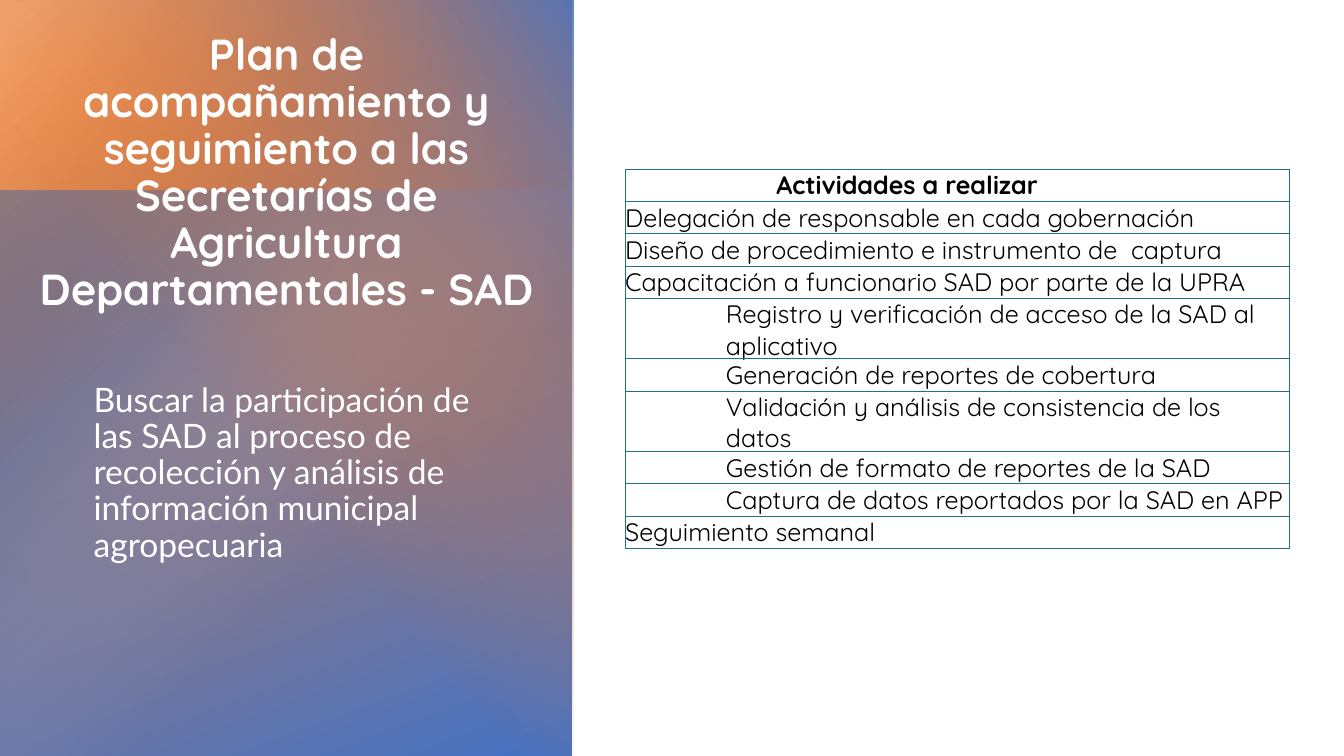
from dataclasses import dataclass

from lxml import etree
from pptx import Presentation
from pptx.dml.color import RGBColor
from pptx.enum import shapes, text
from pptx.oxml import ns
from pptx.util import Emu, Pt

PX = 9144  # one hundred px to the inch
INDENT = 50
WHITE, BLACK, BORDER = "FFFFFF", "000000", "236C95"


@dataclass
class Stop:
    position: int
    colour: str
    opacity: int = 100


@dataclass
class Wash:
    left: int
    top: int
    width: int
    height: int
    stops: list[Stop]
    angle: int | None = None  # None gives a radial wash
    rotation: int = 0


@dataclass
class Activity:
    label: str
    level: int = 0
    bold: bool = False


WASHES = [
    Wash(-2, 0, 569, 753, [Stop(7, "ED7D31"), Stop(100, "4472C4")], 70),
    Wash(-2, 189, 569, 563, [Stop(0, "2F5597"), Stop(60, "8FAADC", 0)], None, 180),
    Wash(-2, 1, 419, 752, [Stop(3, "F4B183", 78), Stop(42, "ED7D31", 0)], 50),
    Wash(-92, 91, 752, 569, [Stop(0, "4472C4", 86), Stop(57, "ED7D31", 0)], 230, 270),
]
ACTIVITIES = [
    Activity("Actividades a realizar", 3, True),
    Activity("Delegación de responsable en cada gobernación"),
    Activity("Diseño de procedimiento e instrumento de  captura"),
    Activity("Capacitación a funcionario SAD por parte de la UPRA"),
    Activity("Registro y verificación de acceso de la SAD al aplicativo", 2),
    Activity("Generación de reportes de cobertura", 2),
    Activity("Validación y análisis de consistencia de los datos", 2),
    Activity("Gestión de formato de reportes de la SAD", 2),
    Activity("Captura de datos reportados por la SAD en APP", 2),
    Activity("Seguimiento semanal"),
]


def px(length: int) -> Emu:
    return Emu(length * PX)


def rgb(colour: str) -> RGBColor:
    return RGBColor.from_string(colour)


def child(parent, tag: str, **attributes):
    values = {name: str(value) for name, value in attributes.items()}
    return etree.SubElement(parent, ns.qn(tag), values)


def add_span(para, words: str, font: str, size: float, colour: str, bold: bool = False) -> None:
    span = para.add_run()
    span.text = words
    span.font.name, span.font.size, span.font.bold = font, Pt(size), bold
    span.font.color.rgb = rgb(colour)


def add_wash(group, wash: Wash) -> None:
    box = group.shapes.add_shape(shapes.MSO_SHAPE.RECTANGLE, px(wash.left), px(wash.top),
                                 px(wash.width), px(wash.height))
    box.rotation = wash.rotation
    box.shadow.inherit = False
    box.line.fill.background()
    box.fill.gradient()
    gradient = box.element.spPr.find(ns.qn("a:gradFill"))
    for part in list(gradient):
        gradient.remove(part)
    stop_list = child(gradient, "a:gsLst")
    for stop in wash.stops:
        mark = child(stop_list, "a:gs", pos=stop.position * 1000)
        colour = child(mark, "a:srgbClr", val=stop.colour)
        if stop.opacity < 100:
            child(colour, "a:alpha", val=stop.opacity * 1000)
    if wash.angle is None:
        circle = child(gradient, "a:path", path="circle")
        child(circle, "a:fillToRect", r=100000, b=100000)
    else:
        child(gradient, "a:lin", ang=wash.angle * 60000, scaled=0)


def fill_cell(cell, activity: Activity) -> None:
    cell.margin_left = cell.margin_right = cell.margin_top = cell.margin_bottom = 0
    cell.vertical_anchor = text.MSO_ANCHOR.MIDDLE
    para = cell.text_frame.paragraphs[0]
    para.level = activity.level
    properties = para._p.get_or_add_pPr()
    properties.set("marL", str(px(activity.level * INDENT)))
    properties.set("indent", "0")
    add_span(para, activity.label, "Quicksand", 18, BLACK, activity.bold)
    borders = cell._tc.get_or_add_tcPr()
    for side in ("a:lnL", "a:lnR", "a:lnT", "a:lnB"):
        line = child(borders, side, w=Pt(0.5))
        child(child(line, "a:solidFill"), "a:srgbClr", val=BORDER)
    cell.fill.background()


def main() -> None:
    deck = Presentation()
    deck.slide_width, deck.slide_height = px(1333), px(750)
    page = deck.slides.add_slide(deck.slide_layouts[5])

    # Title
    title = page.shapes.title
    title.left, title.top, title.width, title.height = px(21), px(140), px(526), px(177)
    frame = title.text_frame
    frame.word_wrap = True
    frame.auto_size = text.MSO_AUTO_SIZE.NONE
    frame.vertical_anchor = text.MSO_ANCHOR.BOTTOM
    para = frame.paragraphs[0]
    para.alignment, para.line_spacing = text.PP_ALIGN.CENTER, 0.9
    add_span(para, "Plan de acompañamiento y seguimiento a las Secretarías de Agricultura "
             "Departamentales - SAD", "Quicksand", 31, WHITE, True)

    # Coloured panel, placed behind the title
    panel = page.shapes.add_group_shape()
    for wash in WASHES:
        add_wash(panel, wash)
    title.element.addprevious(panel.element)

    # Purpose
    purpose = page.shapes.add_textbox(px(83), px(375), px(405), px(279)).text_frame
    purpose.word_wrap = True
    para = purpose.paragraphs[0]
    para.line_spacing = 0.9
    add_span(para, "Buscar la participación de las SAD al proceso de recolección y análisis "
             "de información municipal agropecuaria", "Lato", 24, WHITE)

    # Activities
    table = page.shapes.add_table(len(ACTIVITIES), 1, px(620), px(168), px(659),
                                  px(32 * len(ACTIVITIES))).table
    table.first_row = table.horz_banding = False
    for row, activity in enumerate(ACTIVITIES):
        fill_cell(table.cell(row, 0), activity)

    deck.save("out.pptx")


if __name__ == "__main__":
    main()
